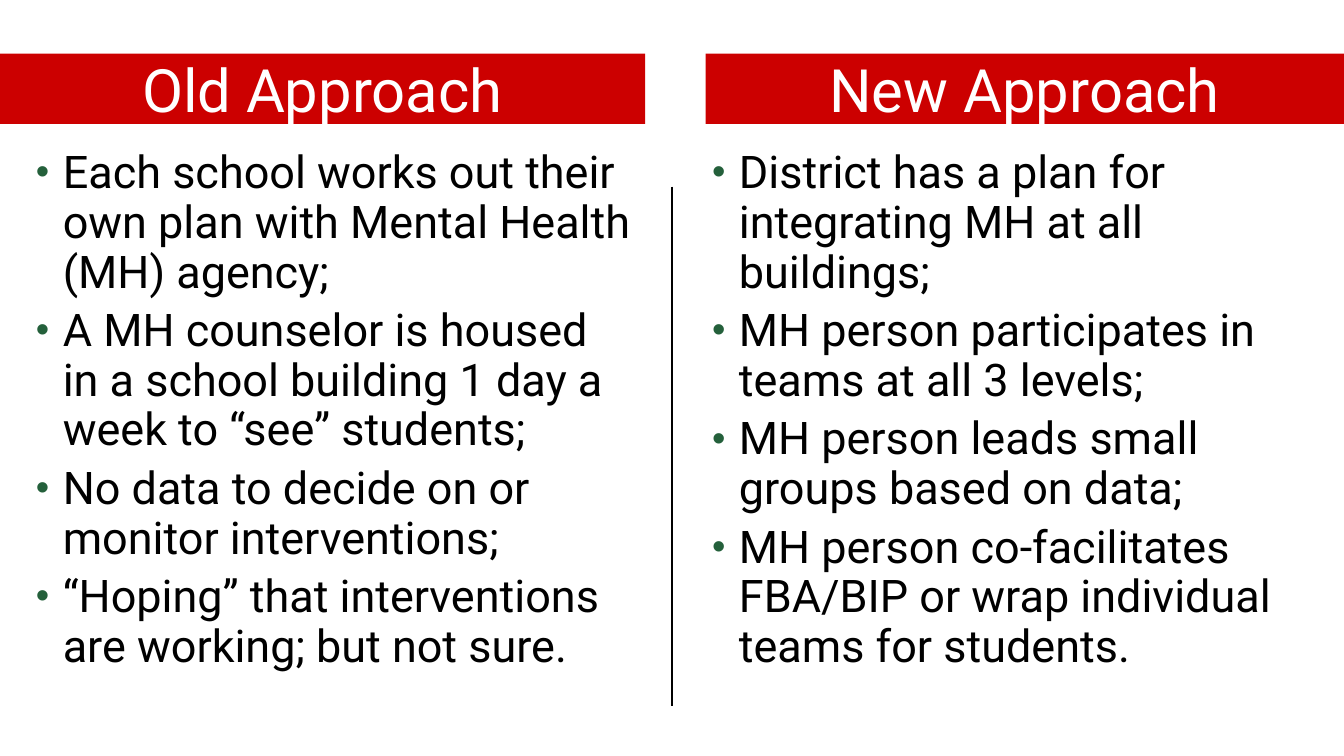
from dataclasses import dataclass

from lxml import etree
from pptx import Presentation
from pptx.dml.color import RGBColor
from pptx.enum.shapes import MSO_CONNECTOR, MSO_SHAPE
from pptx.enum.text import MSO_ANCHOR, PP_ALIGN
from pptx.oxml.ns import qn
from pptx.slide import Slide
from pptx.text.text import _Paragraph
from pptx.util import Pt

RECTANGLE = MSO_SHAPE.RECTANGLE
STRAIGHT = MSO_CONNECTOR.STRAIGHT
MIDDLE = MSO_ANCHOR.MIDDLE
CENTER = PP_ALIGN.CENTER

COLORS = {"banner": "CC0000", "title": "FFFFFF", "body": "000000",
          "bullet": "24603B", "divider": "000000"}
FONT = "Roboto"
BANNER_TOP, BANNER_HEIGHT = 28.8, 37.6
LIST_TOP, LIST_WIDTH, LIST_HEIGHT = 76.3, 333.4, 300
INDENT = 14.4

TITLE_FORMAT = {"alignment": CENTER, "space_before": Pt(6.4)}
LIST_FORMAT = {"line_spacing": 0.92, "space_before": Pt(4.8)}


@dataclass
class Approach:
    title: str
    banner_left: float
    banner_width: float
    list_left: float
    points: list[str]


APPROACHES = [
    Approach("Old Approach", 0, 345.6, 12.2, [
        "Each school works out their own plan with Mental Health (MH) agency;",
        "A MH counselor is housed in a school building 1 day a week to “see” students;",
        "No data to decide on or monitor interventions;",
        "“Hoping” that interventions are working; but not sure.",
    ]),
    Approach("New Approach", 378, 342, 374.4, [
        "District has a plan for integrating MH at all buildings;",
        "MH person participates in teams at all 3 levels;",
        "MH person leads small groups based on data;",
        "MH person co-facilitates FBA/BIP or wrap individual teams for students.",
    ]),
]


def color(name: str) -> RGBColor:
    return RGBColor.from_string(COLORS[name])


def write(paragraph: _Paragraph, text: str, size: float, color_name: str,
          values: dict) -> None:
    for name, value in values.items():
        setattr(paragraph, name, value)
    run = paragraph.add_run()
    run.text = text
    for name, value in {"name": FONT, "size": Pt(size)}.items():
        setattr(run.font, name, value)
    run.font.color.rgb = color(color_name)


def add_bullet(paragraph: _Paragraph) -> None:
    properties = paragraph._p.get_or_add_pPr()
    properties.set("marL", str(Pt(INDENT)))
    properties.set("indent", str(-Pt(INDENT)))
    bullet_color = etree.SubElement(properties, qn("a:buClr"))
    etree.SubElement(bullet_color, qn("a:srgbClr"), val=COLORS["bullet"])
    etree.SubElement(properties, qn("a:buSzPct"), val="85000")
    etree.SubElement(properties, qn("a:buFont"), typeface="Arial")
    etree.SubElement(properties, qn("a:buChar"), char="•")


def add_divider(slide: Slide) -> None:
    divider = slide.shapes.add_connector(
        STRAIGHT, Pt(360), Pt(100), Pt(360), Pt(378))
    divider.line.width = Pt(1.5)
    divider.line.color.rgb = color("divider")
    etree.SubElement(divider._element.spPr, qn("a:effectLst"))


def add_banner(slide: Slide, approach: Approach) -> None:
    banner = slide.shapes.add_shape(
        RECTANGLE, Pt(approach.banner_left), Pt(BANNER_TOP),
        Pt(approach.banner_width), Pt(BANNER_HEIGHT))
    banner.shadow.inherit = False
    banner.fill.solid()
    banner.fill.fore_color.rgb = color("banner")
    banner.line.fill.background()
    frame = banner.text_frame
    frame.vertical_anchor = MIDDLE
    write(frame.paragraphs[0], approach.title, 32, "title", TITLE_FORMAT)


def add_list(slide: Slide, approach: Approach) -> None:
    box = slide.shapes.add_textbox(
        Pt(approach.list_left), Pt(LIST_TOP), Pt(LIST_WIDTH), Pt(LIST_HEIGHT))
    frame = box.text_frame
    frame.word_wrap = True
    for index, point in enumerate(approach.points):
        paragraph = frame.add_paragraph() if index else frame.paragraphs[0]
        write(paragraph, point, 24.1, "body", LIST_FORMAT)
        add_bullet(paragraph)


def main() -> None:
    presentation = Presentation()
    presentation.slide_width = Pt(720)
    presentation.slide_height = Pt(405)
    slide = presentation.slides.add_slide(presentation.slide_layouts[6])

    # Line between the two columns
    add_divider(slide)

    # One banner and one bullet list per approach
    for approach in APPROACHES:
        add_banner(slide, approach)
        add_list(slide, approach)

    presentation.save("out.pptx")


if __name__ == "__main__":
    main()
